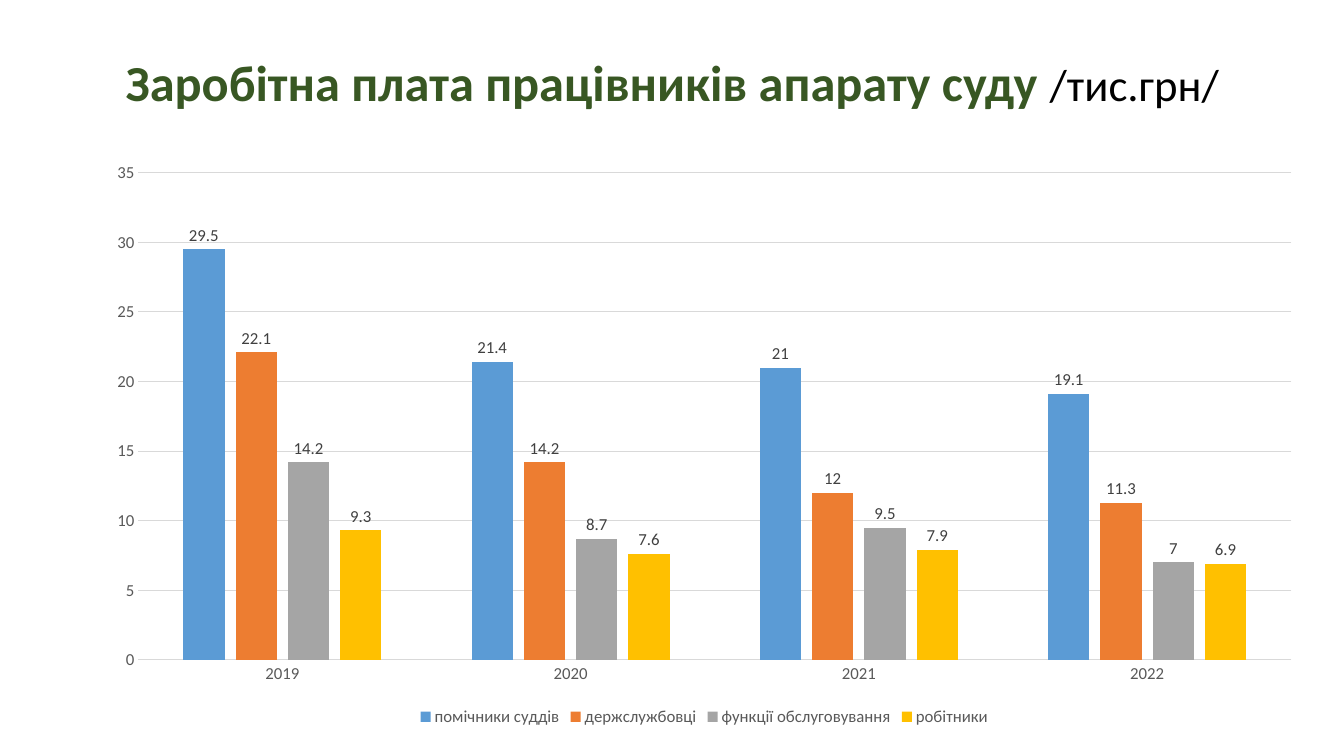
from pptx import Presentation
from pptx.chart import data
from pptx.dml import color
from pptx.enum import chart as ch, text
from pptx.util import Inches, Pt

COLORS = {
    "title": "385723", "unit": "000000", "axis": "595959",
    "label": "404040", "grid": "D9D9D9",
}
FONT = "Calibri"
YEARS = ["2019", "2020", "2021", "2022"]
SALARIES = [
    ("помічники суддів", (29.5, 21.4, 21, 19.1), "5B9BD5"),
    ("держслужбовці", (22.1, 14.2, 12, 11.3), "ED7D31"),
    ("функції обслуговування", (14.2, 8.7, 9.5, 7), "A5A5A5"),
    ("робітники", (9.3, 7.6, 7.9, 6.9), "FFC000"),
]


def rgb(value):
    return color.RGBColor.from_string(value)


def style_font(font, size, tone, bold=False):
    font.name = FONT
    font.size = Pt(size)
    font.bold = bold
    font.color.rgb = rgb(COLORS[tone])


def style_line(line):
    line.color.rgb = rgb(COLORS["grid"])
    line.width = Pt(0.75)


def add_title(slide, runs):
    title = slide.shapes.add_textbox(
        Inches(0.92), Inches(0.4), Inches(11.5), Inches(0.9))
    frame = title.text_frame
    frame.word_wrap = True
    frame.vertical_anchor = text.MSO_ANCHOR.MIDDLE
    heading = frame.paragraphs[0]
    heading.alignment = text.PP_ALIGN.CENTER
    heading.line_spacing = 0.9
    for words, size, tone, bold in runs:
        run = heading.add_run()
        run.text = words
        style_font(run.font, size, tone, bold)


def style_axes(chart):
    years, amounts = chart.category_axis, chart.value_axis
    for axis in (years, amounts):
        axis.major_tick_mark = ch.XL_TICK_MARK.NONE
        axis.minor_tick_mark = ch.XL_TICK_MARK.NONE
        style_font(axis.tick_labels.font, 12, "axis")
    style_line(years.format.line)
    amounts.format.line.fill.background()
    amounts.minimum_scale, amounts.maximum_scale = 0, 35
    amounts.major_unit = 5
    amounts.has_major_gridlines = True
    style_line(amounts.major_gridlines.format.line)


def style_series(series, fill):
    series.format.fill.solid()
    series.format.fill.fore_color.rgb = rgb(fill)
    series.invert_if_negative = False
    labels = series.data_labels
    labels.show_value = True
    labels.position = ch.XL_LABEL_POSITION.OUTSIDE_END
    style_font(labels.font, 12, "label")


def add_salary_chart(slide):
    salaries = data.CategoryChartData()
    salaries.categories = YEARS
    for name, values, _ in SALARIES:
        salaries.add_series(name, values)
    chart = slide.shapes.add_chart(
        ch.XL_CHART_TYPE.COLUMN_CLUSTERED,
        Inches(0.92), Inches(1.5), Inches(12.13), Inches(5.75),
        salaries).chart
    style_font(chart.font, 10, "unit")
    chart.has_title = False

    # Columns
    columns = chart.plots[0]
    columns.gap_width = 219
    columns.overlap = -27
    columns.vary_by_categories = False
    for series, (_, _, fill) in zip(columns.series, SALARIES):
        style_series(series, fill)

    # Axes and legend
    style_axes(chart)
    chart.has_legend = True
    chart.legend.position = ch.XL_LEGEND_POSITION.BOTTOM
    chart.legend.include_in_layout = False
    style_font(chart.legend.font, 12, "axis")


def main():
    deck = Presentation()
    deck.slide_width = Inches(13.33)
    deck.slide_height = Inches(7.5)
    slide = deck.slides.add_slide(deck.slide_layouts[6])
    add_title(slide, [
        ("Заробітна плата працівників апарату суду ", 36, "title", True),
        ("/тис.грн/", 32, "unit", False),
    ])
    add_salary_chart(slide)
    deck.save("out.pptx")


if __name__ == "__main__":
    main()
